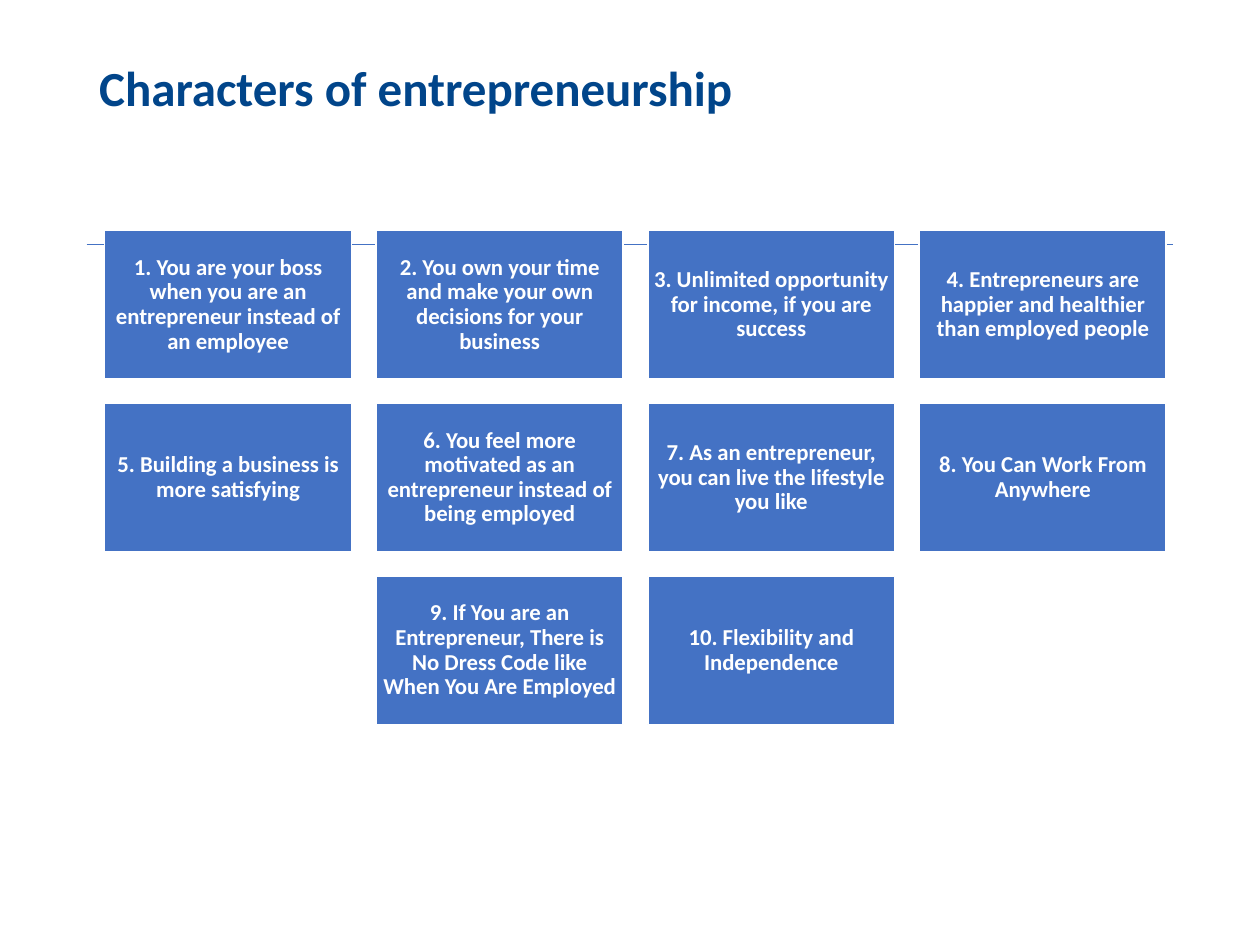
"""Build a slide with ten characters of entrepreneurship in a centred grid of cards."""

from dataclasses import dataclass

from lxml import etree
from pptx import Presentation
from pptx.dml.color import RGBColor
from pptx.enum.shapes import MSO_CONNECTOR, MSO_SHAPE
from pptx.enum.text import MSO_ANCHOR, PP_ALIGN
from pptx.oxml.ns import qn
from pptx.shapes.base import BaseShape
from pptx.slide import Slide
from pptx.util import Pt

RECTANGLE = MSO_SHAPE.RECTANGLE
STRAIGHT = MSO_CONNECTOR.STRAIGHT
MIDDLE = MSO_ANCHOR.MIDDLE
LEFT = PP_ALIGN.LEFT
CENTER = PP_ALIGN.CENTER

NAVY = RGBColor(0x01, 0x45, 0x8A)
BLUE = RGBColor(0x44, 0x72, 0xC4)
WHITE = RGBColor(0xFF, 0xFF, 0xFF)

FONT = "Calibri"
TITLE_ONLY_LAYOUT = 5
MARGIN = 49.5
CONTENT_WIDTH = 621
RULE_TOP = 139.5
COLUMNS = 4
GRID_LEFT = 59.75
GRID_TOP = 131.8
CARD_WIDTH = 141.1
CARD_HEIGHT = 84.7
GAP = 14.1

CHARACTERS = (
    "You are your boss when you are an entrepreneur instead of an employee",
    "You own your time and make your own decisions for your business",
    "Unlimited opportunity for income, if you are success",
    "Entrepreneurs are happier and healthier than employed people",
    "Building a business is more satisfying",
    "You feel more motivated as an entrepreneur instead of being employed",
    "As an entrepreneur, you can live the lifestyle you like",
    "You Can Work From Anywhere",
    "If You are an Entrepreneur, There is No Dress Code like When You Are Employed",
    "Flexibility and Independence",
)


@dataclass(frozen=True)
class Card:
    text: str
    left: float
    top: float


def write_text(
    shape: BaseShape,
    text: str,
    *,
    size: float,
    color: RGBColor,
    align: PP_ALIGN,
    inset: float,
) -> None:
    """Write one bold paragraph, centred vertically in the shape."""
    frame = shape.text_frame
    frame.word_wrap = True
    frame.vertical_anchor = MIDDLE
    frame.margin_left = frame.margin_right = Pt(inset)
    frame.margin_top = frame.margin_bottom = Pt(3.6)
    paragraph = frame.paragraphs[0]
    paragraph.alignment = align
    paragraph.line_spacing = 0.9
    run = paragraph.add_run()
    run.text = text
    run.font.name = FONT
    run.font.size = Pt(size)
    run.font.bold = True
    run.font.color.rgb = color


def arrange_cards() -> list[Card]:
    """Number the characters and place them in rows, centring a short last row."""
    cards = []
    for index, text in enumerate(CHARACTERS):
        row, column = divmod(index, COLUMNS)
        row_length = min(COLUMNS, len(CHARACTERS) - row * COLUMNS)
        offset = column + (COLUMNS - row_length) / 2
        left = GRID_LEFT + offset * (CARD_WIDTH + GAP)
        top = GRID_TOP + row * (CARD_HEIGHT + GAP)
        cards.append(Card(f"{index + 1}. {text}", left, top))
    return cards


def draw_card(slide: Slide, card: Card) -> None:
    """Draw one blue card with its text."""
    shape = slide.shapes.add_shape(
        RECTANGLE, Pt(card.left), Pt(card.top), Pt(CARD_WIDTH), Pt(CARD_HEIGHT)
    )
    shape.shadow.inherit = False
    shape.fill.solid()
    shape.fill.fore_color.rgb = BLUE
    shape.line.color.rgb = WHITE
    shape.line.width = Pt(1)
    write_text(shape, card.text, size=13, color=WHITE, align=CENTER, inset=3.6)


def draw_rule(slide: Slide) -> None:
    """Draw the thin horizontal rule behind the first row."""
    rule = slide.shapes.add_connector(
        STRAIGHT, Pt(MARGIN), Pt(RULE_TOP), Pt(MARGIN + CONTENT_WIDTH), Pt(RULE_TOP)
    )
    rule.line.color.rgb = BLUE
    rule.line.width = Pt(0.5)
    etree.SubElement(rule._element.spPr, qn("a:effectLst"))


def main() -> None:
    """Build and save the presentation."""
    presentation = Presentation()
    presentation.slide_width = Pt(720)
    presentation.slide_height = Pt(540)
    slide = presentation.slides.add_slide(presentation.slide_layouts[TITLE_ONLY_LAYOUT])
    title = slide.shapes.title
    title.left, title.top = Pt(MARGIN), Pt(14.4)
    title.width, title.height = Pt(CONTENT_WIDTH), Pt(74.2)
    write_text(
        title, "Characters of entrepreneurship", size=28, color=NAVY, align=LEFT, inset=7.2
    )
    draw_rule(slide)
    for card in arrange_cards():
        draw_card(slide, card)
    presentation.save("out.pptx")


if __name__ == "__main__":
    main()
